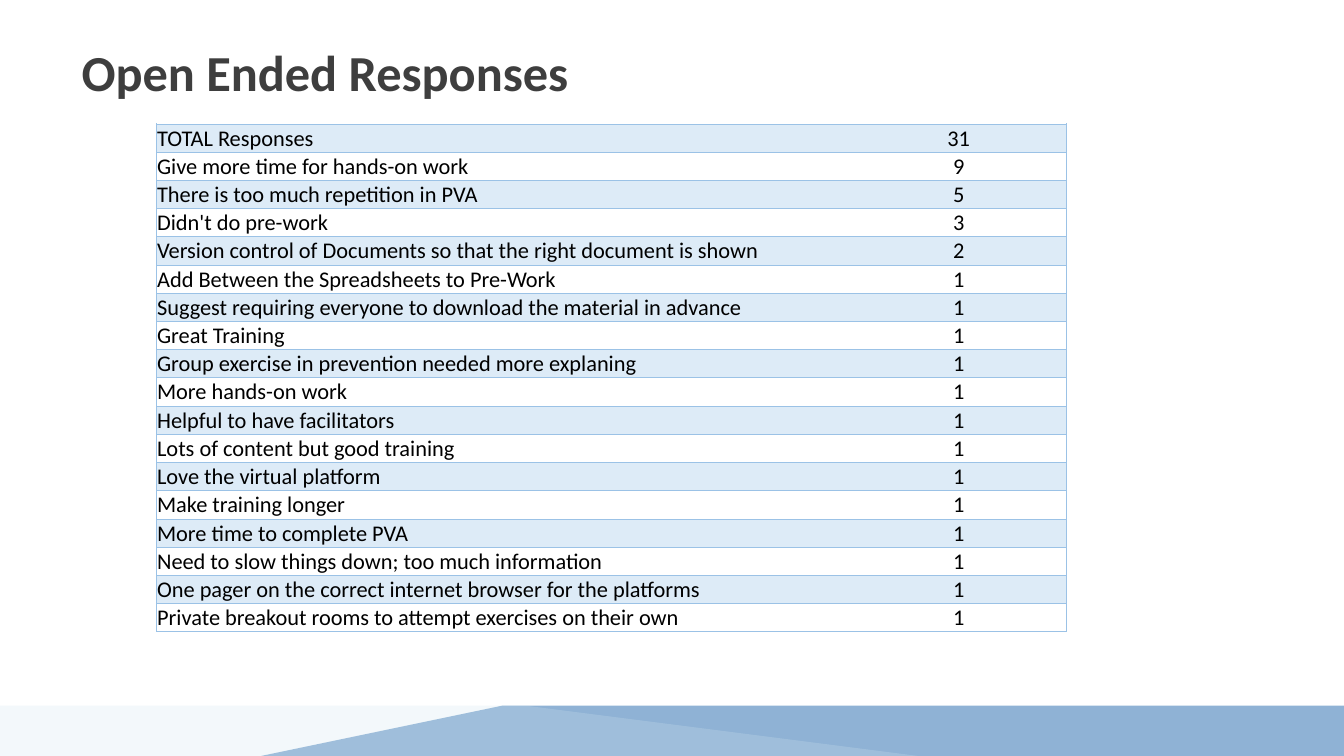
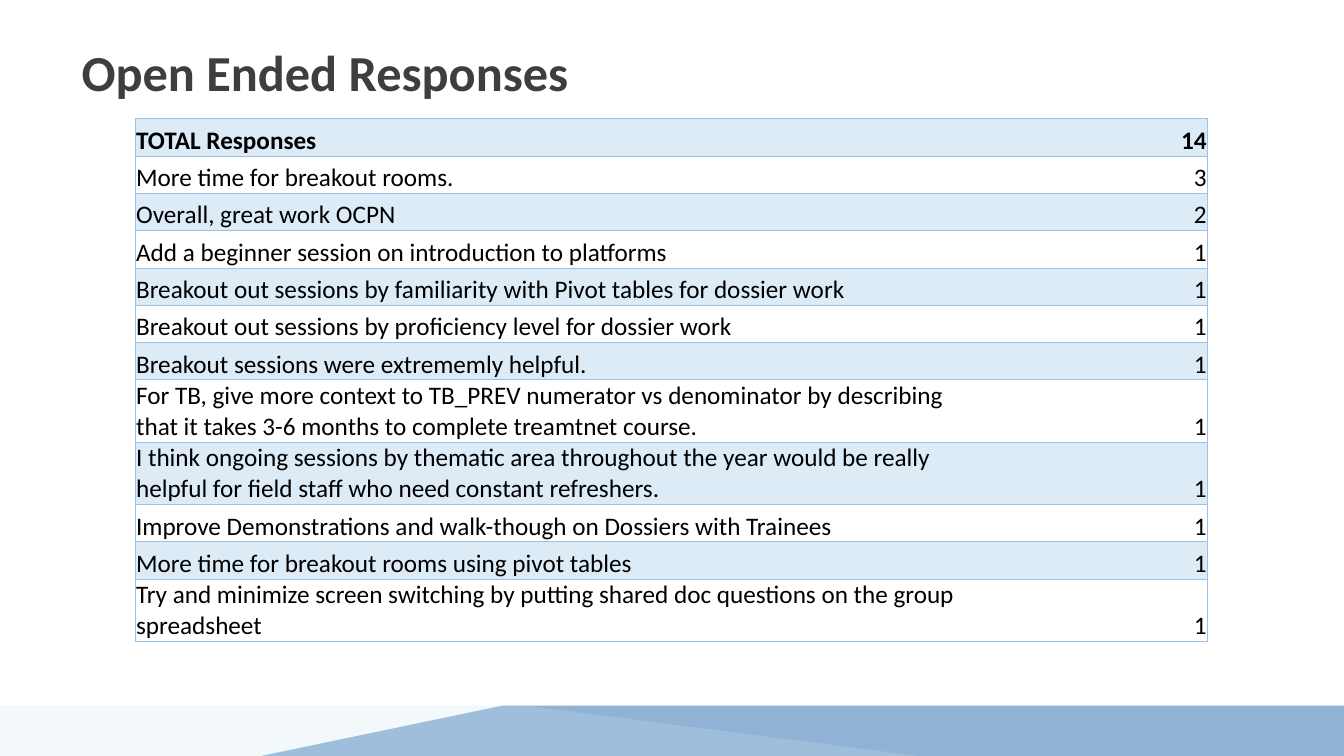
import pptx
import pptx.dml.color
import pptx.enum.text
import pptx.oxml
import pptx.oxml.ns
import pptx.util
from pptx.util import Cm

Align = pptx.enum.text.PP_ALIGN
Anchor = pptx.enum.text.MSO_ANCHOR

FONT = "Calibri"
TITLE_COLOR, TEXT_COLOR = "3E3E3E", "000000"
STRIPE_COLOR, BORDER_COLOR = "DDEBF7", "9BC2E6"
SLIDE_WIDTH, SLIDE_HEIGHT = 33.87, 19.05
BAND_TOP = 17.78
ONE_LINE, TWO_LINES = 0.94, 1.57

# Footer bands: colour, opacity in percent, corners in centimetres
BANDS = [
    ("2166AC", 50, [(6.58, SLIDE_HEIGHT), (12.67, BAND_TOP),
                    (SLIDE_WIDTH, BAND_TOP), (SLIDE_WIDTH, SLIDE_HEIGHT)]),
    ("D1E5F0", 25, [(0, SLIDE_HEIGHT), (0, BAND_TOP),
                    (13.23, BAND_TOP), (23.14, SLIDE_HEIGHT)]),
]

PAGES = [
    {
        "title": "Open Ended Responses",
        "left": 3.94, "top": 3.12, "columns": (17.5, 5.44),
        "size": 16, "count_align": Align.CENTER, "bold_total": False,
        "row_height": 0.7, "tall_rows": (),
        "rows": [
            ("TOTAL Responses", 31),
            ("Give more time for hands-on work", 9),
            ("There is too much repetition in PVA", 5),
            ("Didn't do pre-work", 3),
            ("Version control of Documents so that the right document is shown", 2),
            ("Add Between the Spreadsheets to Pre-Work", 1),
            ("Suggest requiring everyone to download the material in advance", 1),
            ("Great Training", 1),
            ("Group exercise in prevention needed more explaning", 1),
            ("More hands-on work", 1),
            ("Helpful to have facilitators", 1),
            ("Lots of content but good training", 1),
            ("Love the virtual platform", 1),
            ("Make training longer", 1),
            ("More time to complete PVA", 1),
            ("Need to slow things down; too much information", 1),
            ("One pager on the correct internet browser for the platforms", 1),
            ("Private breakout rooms to attempt exercises on their own", 1),
        ],
    },
    {
        "title": "Open Ended Responses",
        "left": 3.41, "top": 2.99, "columns": (21.5, 5.52),
        "size": 18, "count_align": Align.RIGHT, "bold_total": True,
        "row_height": ONE_LINE, "tall_rows": (7, 8, 11),
        "rows": [
            ("TOTAL Responses", 14),
            ("More time for breakout rooms.", 3),
            ("Overall, great work OCPN", 2),
            ("Add a beginner session on introduction to platforms", 1),
            ("Breakout out sessions by familiarity with Pivot tables for dossier work", 1),
            ("Breakout out sessions by proficiency level for dossier work", 1),
            ("Breakout sessions were extrememly helpful.", 1),
            ("For TB, give more context to TB_PREV numerator vs denominator by "
             "describing that it takes 3-6 months to complete treamtnet course.", 1),
            ("I think ongoing sessions by thematic area throughout the year would be "
             "really helpful for field staff who need constant refreshers.", 1),
            ("Improve Demonstrations and walk-though on Dossiers with Trainees", 1),
            ("More time for breakout rooms using pivot tables", 1),
            ("Try and minimize screen switching by putting shared doc questions on "
             "the group spreadsheet", 1),
        ],
    },
]


def rgb(color):
    return pptx.dml.color.RGBColor.from_string(color)


def add_run(para, text, size, color, bold):
    span = para.add_run()
    span.text = text
    span.font.name = FONT
    span.font.size = pptx.util.Pt(size)
    span.font.bold = bold
    span.font.color.rgb = rgb(color)


def add_bands(page, layout):
    """Draw the footer bands on a page and move them behind its layout's title."""
    layout_title = layout.placeholders[0].element
    for number, (color, opacity, corners) in enumerate(BANDS):
        start, *others = [(Cm(x), Cm(y)) for x, y in corners]
        builder = page.shapes.build_freeform(*start, scale=1.0)
        builder.add_line_segments(others, close=True)
        band = builder.convert_to_shape()
        band.name = f"Footer band {number + 1}"
        band.shadow.inherit = False
        band.line.fill.background()
        band.fill.solid()
        band.fill.fore_color.rgb = rgb(color)
        tint = band.element.xpath("./p:spPr/a:solidFill/a:srgbClr")[0]
        alpha = pptx.oxml.parse_xml(
            f'<a:alpha {pptx.oxml.ns.nsdecls("a")} val="{opacity * 1000}"/>')
        tint.append(alpha)
        band.element.xpath("./p:nvSpPr/p:cNvPr")[0].set("id", str(100 + number))
        layout_title.addprevious(band.element)


def add_title(page, text):
    title = page.shapes.title
    title.left, title.top = Cm(1.8), Cm(0.9)
    title.width, title.height = Cm(30.1), Cm(2.26)
    frame = title.text_frame
    frame.auto_size = pptx.enum.text.MSO_AUTO_SIZE.NONE
    frame.vertical_anchor = Anchor.TOP
    para = frame.paragraphs[0]
    para.alignment = Align.LEFT
    add_run(para, text, 36, TITLE_COLOR, True)


def set_borders(cell, visible):
    """Line the sides named in visible (of L, R, T, B) and clear the others."""
    properties = cell._tc.get_or_add_tcPr()
    for side in "LRTB":
        paint = "<a:noFill/>"
        if side in visible:
            paint = f'<a:solidFill><a:srgbClr val="{BORDER_COLOR}"/></a:solidFill>'
        properties.append(pptx.oxml.parse_xml(
            f'<a:ln{side} {pptx.oxml.ns.nsdecls("a")} w="6350">{paint}</a:ln{side}>'))


def format_cell(cell, striped):
    cell.margin_left = cell.margin_right = cell.margin_top = Cm(0.02)
    cell.margin_bottom = 0
    cell.vertical_anchor = Anchor.BOTTOM
    if striped:
        cell.fill.solid()
        cell.fill.fore_color.rgb = rgb(STRIPE_COLOR)
    else:
        cell.fill.background()


def add_responses(page, content):
    rows, widths = content["rows"], content["columns"]
    heights = [TWO_LINES if index in content["tall_rows"] else content["row_height"]
               for index in range(len(rows))]
    table = page.shapes.add_table(
        len(rows), len(widths), Cm(content["left"]), Cm(content["top"]),
        Cm(sum(widths)), Cm(sum(heights))).table
    table.first_row = table.horz_banding = False
    for column, width in zip(table.columns, widths):
        column.width = Cm(width)
    for index, (values, height) in enumerate(zip(rows, heights)):
        table.rows[index].height = Cm(height)
        bold = content["bold_total"] and index == 0
        styles = [("LTB", Align.LEFT), ("RTB", content["count_align"])]
        for column, (value, (sides, align)) in enumerate(zip(values, styles)):
            cell = table.cell(index, column)
            set_borders(cell, sides)
            format_cell(cell, striped=index % 2 == 0)
            para = cell.text_frame.paragraphs[0]
            para.alignment = align
            add_run(para, str(value), content["size"], TEXT_COLOR, bold)


def main():
    deck = pptx.Presentation()
    deck.slide_width, deck.slide_height = Cm(SLIDE_WIDTH), Cm(SLIDE_HEIGHT)
    layout = deck.slide_layouts.get_by_name("Title Only")
    for content in PAGES:
        page = deck.slides.add_slide(layout)
        add_title(page, content["title"])
        add_responses(page, content)
    add_bands(deck.slides[0], layout)
    deck.save("out.pptx")


if __name__ == "__main__":
    main()
